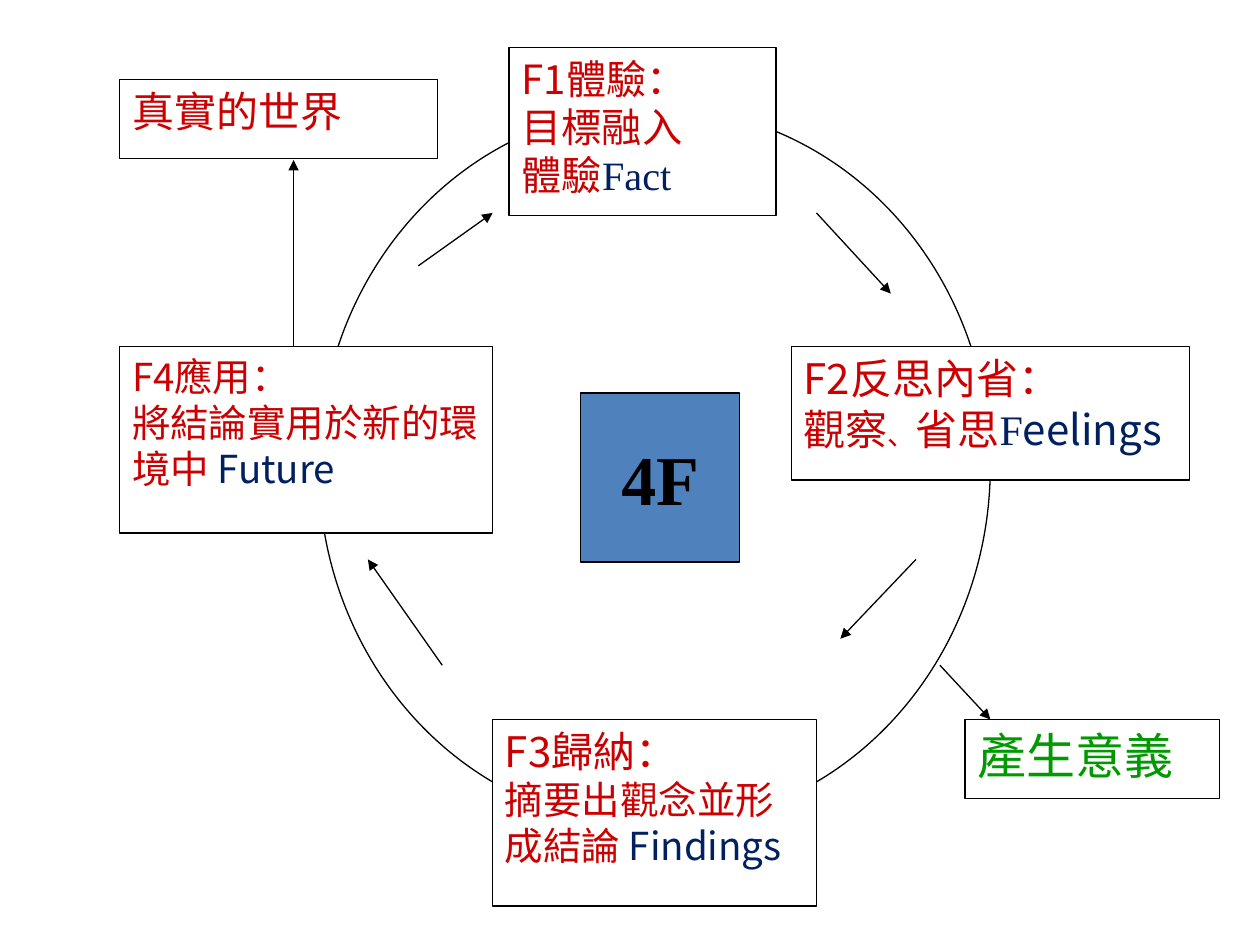
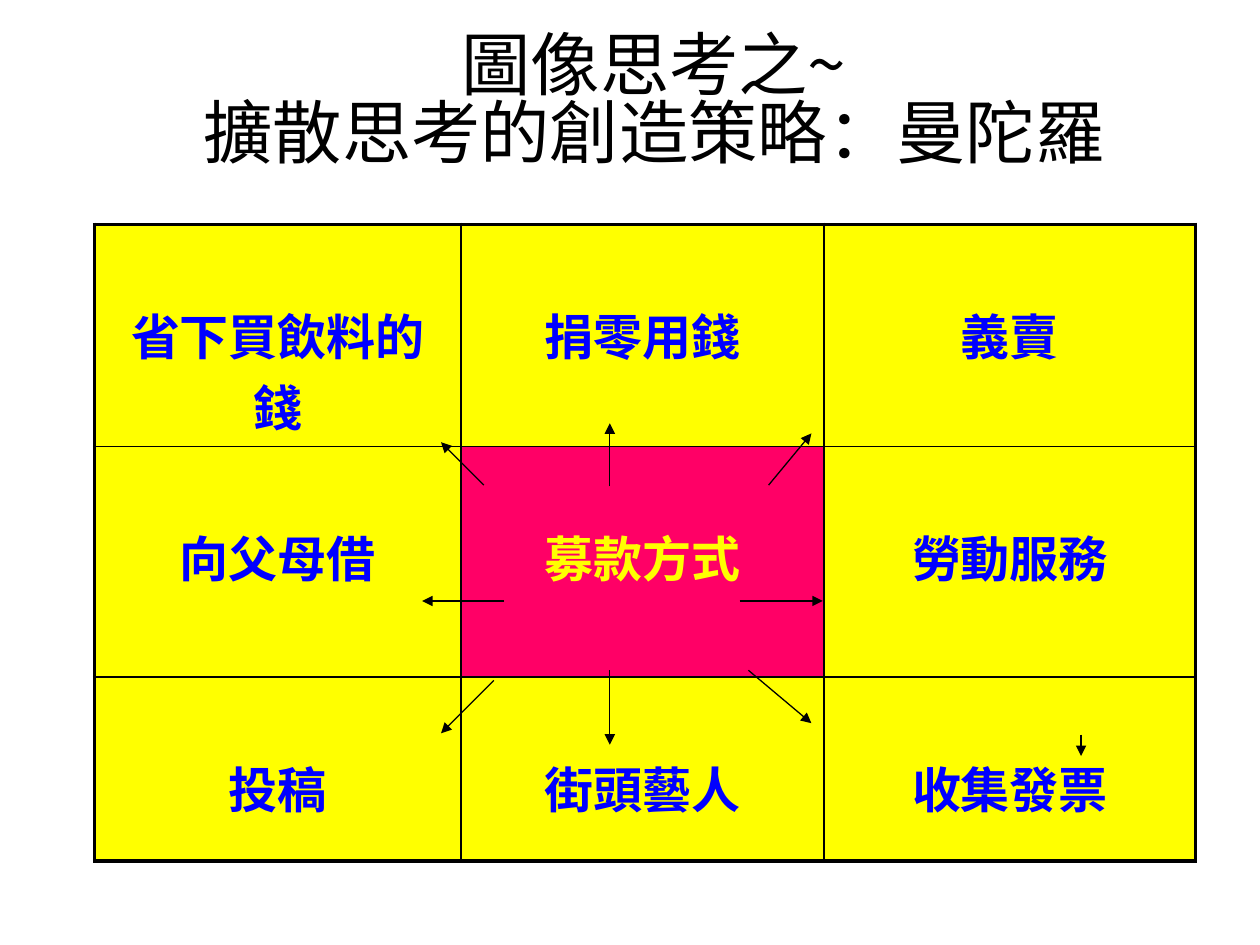
from dataclasses import dataclass
from typing import Optional

from lxml import etree
from pptx import Presentation
from pptx.dml.color import RGBColor
from pptx.enum.shapes import MSO_CONNECTOR, MSO_SHAPE
from pptx.enum.text import MSO_ANCHOR, MSO_AUTO_SIZE, PP_ALIGN
from pptx.oxml.ns import qn
from pptx.util import Pt

RECTANGLE, ELLIPSE = MSO_SHAPE.RECTANGLE, MSO_SHAPE.OVAL
STRAIGHT = MSO_CONNECTOR.STRAIGHT
TOP, MIDDLE = MSO_ANCHOR.TOP, MSO_ANCHOR.MIDDLE
LEFT, CENTER = PP_ALIGN.LEFT, PP_ALIGN.CENTER

# Shared look: 100 px to the inch
EMU_PER_PX = 9144
PAGE_WIDTH, PAGE_HEIGHT = 1000, 750
TITLE_ONLY, BLANK = 5, 6
SANS, SERIF, LATO = "Noto Sans CJK SC", "Times New Roman", "Lato"
BLACK, WHITE, RED, NAVY = "000000", "FFFFFF", "CC0000", "002060"
GREEN, STEEL = "009900", "4F81BD"
YELLOW, PINK, BLUE = "FFFF00", "FF0066", "0000FF"
HAIRLINE = 0.75


@dataclass
class Span:
    text: str
    color: Optional[str] = None
    size: Optional[float] = None
    face: Optional[str] = None


@dataclass
class Para:
    spans: list[Span]
    size: float
    color: str = RED
    face: str = SANS
    bold: bool = False
    align: PP_ALIGN = LEFT


@dataclass
class Box:
    left: int
    top: int
    width: int
    height: int
    paras: list[Para]
    fill: str = WHITE
    preset: MSO_SHAPE = RECTANGLE
    anchor: MSO_ANCHOR = TOP
    wrap: bool = True


@dataclass
class Arrow:
    x1: int
    y1: int
    x2: int
    y2: int


def px(length: int) -> int:
    return length * EMU_PER_PX


def rgb(color: str) -> RGBColor:
    return RGBColor.from_string(color)


def set_font(font, size=None, color=None, face=None, bold=None) -> None:
    if size:
        font.size = Pt(size)
    if color:
        font.color.rgb = rgb(color)
    if bold:
        font.bold = True
    if face:
        font.name = face
        etree.SubElement(font._rPr, qn("a:ea"), typeface=SANS)


def write_paras(frame, paras: list[Para]) -> None:
    for index, para in enumerate(paras):
        paragraph = frame.add_paragraph() if index else frame.paragraphs[0]
        paragraph.alignment = para.align
        set_font(paragraph.font, para.size, para.color, para.face, para.bold)
        for span in para.spans:
            run = paragraph.add_run()
            run.text = span.text
            set_font(run.font, span.size, span.color, span.face)


def draw_box(page, box: Box) -> None:
    shape = page.shapes.add_shape(
        box.preset, px(box.left), px(box.top), px(box.width), px(box.height))
    shape.shadow.inherit = False
    shape.fill.solid()
    shape.fill.fore_color.rgb = rgb(box.fill)
    shape.line.color.rgb = rgb(BLACK)
    shape.line.width = Pt(HAIRLINE)
    frame = shape.text_frame
    frame.word_wrap = box.wrap
    frame.vertical_anchor = box.anchor
    write_paras(frame, box.paras)


def draw_arrow(page, arrow: Arrow) -> None:
    connector = page.shapes.add_connector(
        STRAIGHT, px(arrow.x1), px(arrow.y1), px(arrow.x2), px(arrow.y2))
    connector.line.color.rgb = rgb(BLACK)
    connector.line.width = Pt(HAIRLINE)
    outline = connector.line._get_or_add_ln()
    etree.SubElement(outline, qn("a:tailEnd"), type="triangle")
    etree.SubElement(connector._element.spPr, qn("a:effectLst"))


def add_border(cell, side: str, width: float) -> None:
    line = etree.SubElement(cell._tc.get_or_add_tcPr(), qn(f"a:ln{side}"),
                            w=str(Pt(width)))
    fill = etree.SubElement(line, qn("a:solidFill"))
    etree.SubElement(fill, qn("a:srgbClr"), val=BLACK)


# Slide 1: the 4F learning cycle
CYCLE_BOXES = [
    Box(253, 85, 533, 571, [], preset=ELLIPSE),
    Box(404, 38, 212, 133, [
        Para([Span("F1體驗：")], 23),
        Para([Span("目標融入")], 23),
        Para([Span("體驗"), Span("Fact", NAVY, face=SERIF)], 23)]),
    Box(95, 275, 296, 148, [
        Para([Span("F4應用：")], 22),
        Para([Span("將結論實用於新的環境中 "), Span("Future", NAVY)], 22)]),
    Box(628, 275, 316, 106, [
        Para([Span("F2反思內省：")], 24),
        Para([Span("觀察"), Span("、", size=16), Span("省思"),
              Span("F", NAVY, face=SERIF), Span("eelings", NAVY)], 24)]),
    Box(391, 571, 257, 148, [
        Para([Span("F3歸納：")], 24),
        Para([Span("摘要出觀念並形成結論 "), Span("Findings", NAVY)], 22)]),
    Box(95, 63, 252, 63, [Para([Span("真實的世界")], 24, face=SERIF)]),
    Box(766, 571, 202, 63, [Para([Span("產生意義")], 28, GREEN, SERIF)]),
    Box(461, 312, 126, 134,
        [Para([Span("4F")], 40, BLACK, SERIF, True, CENTER)],
        fill=STEEL, anchor=MIDDLE, wrap=False),
]
CYCLE_ARROWS = [
    Arrow(648, 169, 707, 233), Arrow(727, 444, 667, 507),
    Arrow(351, 528, 292, 444), Arrow(332, 211, 391, 169),
    Arrow(746, 528, 786, 571), Arrow(233, 275, 233, 127),
]

# Slide 2: the mandala of fundraising ideas
MANDALA_TITLE = "圖像思考之~\v擴散思考的創造策略：曼陀羅"
MANDALA_IDEAS = [
    ["省下買飲料的錢", "捐零用錢", "義賣"],
    ["向父母借", "募款方式", "勞動服務"],
    ["投稿", "街頭藝人", "收集發票"],
]
COLUMN_WIDTHS, ROW_HEIGHTS = [291, 288, 295], [173, 183, 146]
CELL_TOP_MARGIN = 59
OUTER_BORDER, INNER_BORDER = 2.25, 1
MANDALA_ARROWS = [
    Arrow(610, 385, 644, 344), Arrow(484, 386, 484, 336),
    Arrow(384, 385, 350, 351), Arrow(400, 477, 335, 477),
    Arrow(392, 540, 350, 582), Arrow(484, 532, 484, 591),
    Arrow(594, 532, 644, 574), Arrow(587, 477, 653, 477),
    Arrow(858, 583, 858, 600),
]


def draw_title(page, text: str) -> None:
    title = page.shapes.title
    title.left, title.top = px(98), px(44)
    title.width, title.height = px(842), px(77)
    frame = title.text_frame
    frame.text = text
    frame.word_wrap = True
    frame.auto_size = MSO_AUTO_SIZE.NONE
    frame.vertical_anchor = MIDDLE
    paragraph = frame.paragraphs[0]
    paragraph.alignment = CENTER
    paragraph.line_spacing = 0.82
    set_font(paragraph.font, 39.6, BLACK, SANS)


def draw_mandala(page) -> None:
    table = page.shapes.add_table(
        len(ROW_HEIGHTS), len(COLUMN_WIDTHS), px(75), px(178),
        px(sum(COLUMN_WIDTHS)), px(sum(ROW_HEIGHTS))).table
    table.first_row = table.horz_banding = False
    for column, width in zip(table.columns, COLUMN_WIDTHS):
        column.width = px(width)
    for row, height in zip(table.rows, ROW_HEIGHTS):
        row.height = px(height)
    for row_index, ideas in enumerate(MANDALA_IDEAS):
        for column_index, idea in enumerate(ideas):
            cell = table.cell(row_index, column_index)
            is_center = row_index == column_index == 1
            outer_sides = {"L": column_index == 0, "R": column_index == 2,
                           "T": row_index == 0, "B": row_index == 2}
            for side, is_outer in outer_sides.items():
                add_border(cell, side, OUTER_BORDER if is_outer else INNER_BORDER)
            cell.fill.solid()
            cell.fill.fore_color.rgb = rgb(PINK if is_center else YELLOW)
            cell.margin_top = px(CELL_TOP_MARGIN)
            color = YELLOW if is_center else BLUE
            write_paras(cell.text_frame,
                        [Para([Span(idea)], 28, color, LATO, True, CENTER)])


def main() -> None:
    deck = Presentation()
    deck.slide_width, deck.slide_height = px(PAGE_WIDTH), px(PAGE_HEIGHT)

    cycle_page = deck.slides.add_slide(deck.slide_layouts[BLANK])
    for box in CYCLE_BOXES:
        draw_box(cycle_page, box)
    for arrow in CYCLE_ARROWS:
        draw_arrow(cycle_page, arrow)

    mandala_page = deck.slides.add_slide(deck.slide_layouts[TITLE_ONLY])
    draw_title(mandala_page, MANDALA_TITLE)
    draw_mandala(mandala_page)
    for arrow in MANDALA_ARROWS:
        draw_arrow(mandala_page, arrow)

    deck.save("out.pptx")


if __name__ == "__main__":
    main()
